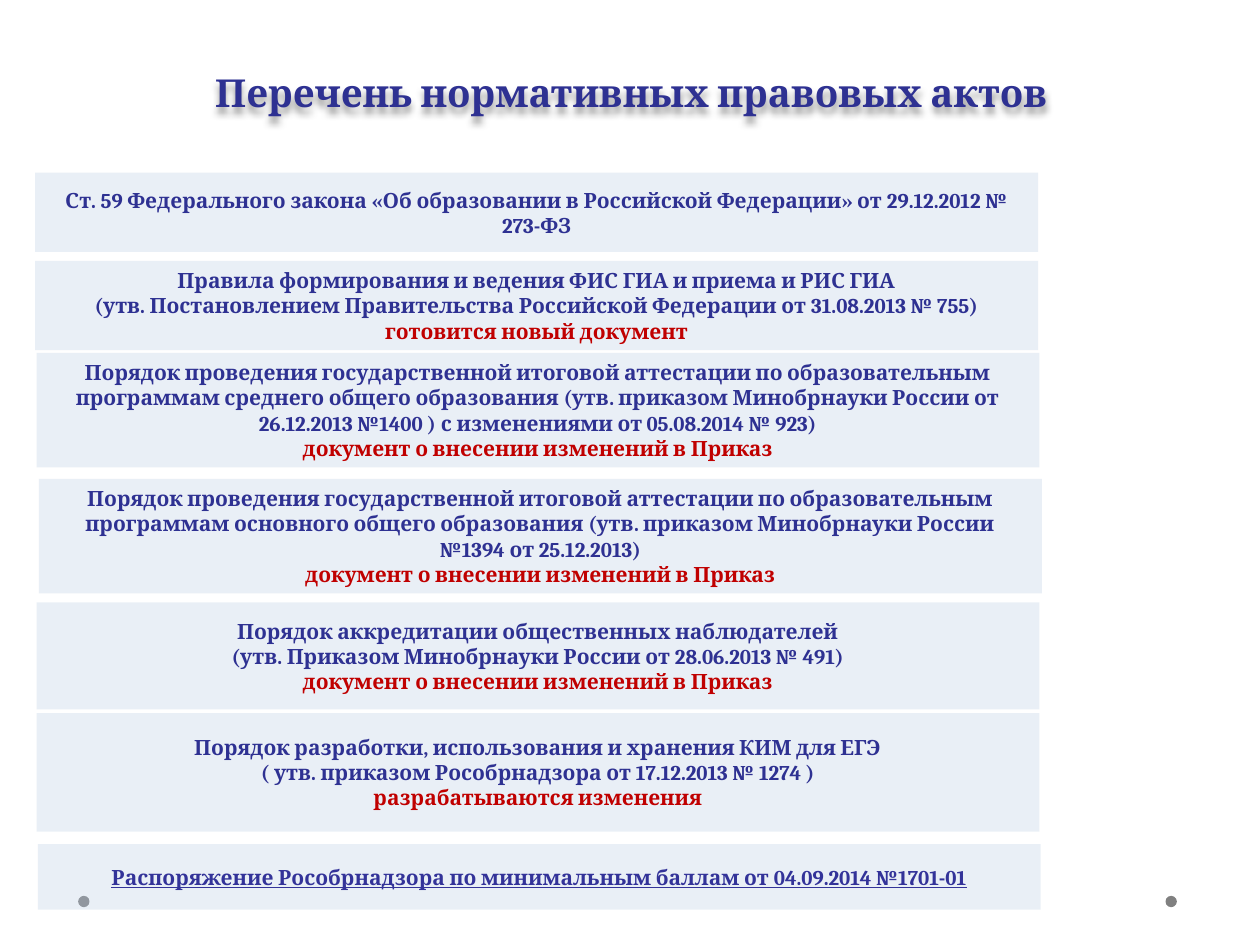
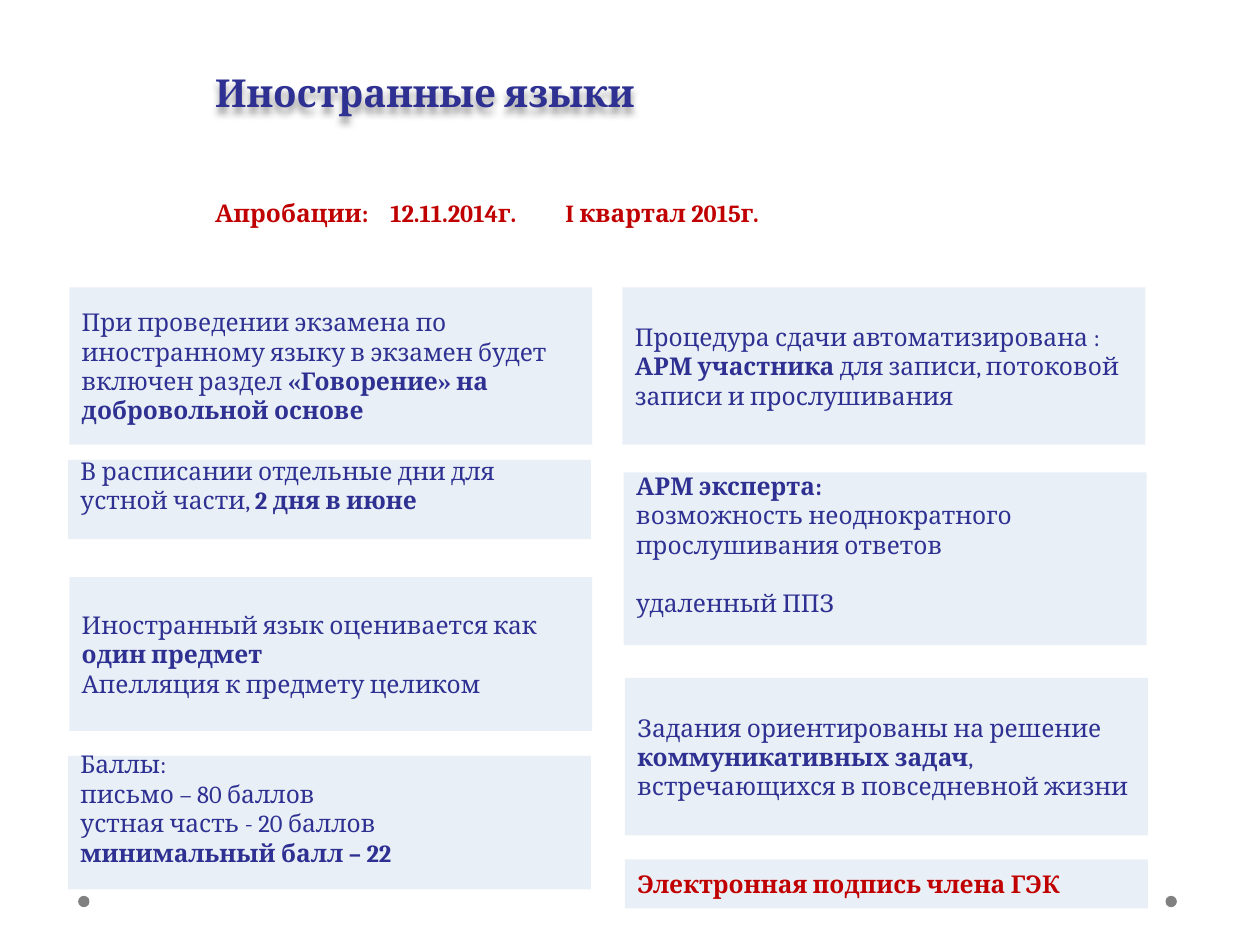
from dataclasses import dataclass

from lxml import etree
from pptx import Presentation
from pptx.dml.color import RGBColor
from pptx.enum.shapes import MSO_SHAPE
from pptx.enum.text import MSO_ANCHOR, PP_ALIGN
from pptx.oxml.ns import qn
from pptx.util import Inches, Pt

RECTANGLE, OVAL = MSO_SHAPE.RECTANGLE, MSO_SHAPE.OVAL
LEFT, CENTER = PP_ALIGN.LEFT, PP_ALIGN.CENTER
MIDDLE = MSO_ANCHOR.MIDDLE


@dataclass(frozen=True)
class Theme:
    font: str = "Cambria"
    navy: str = "2E3192"
    indigo: str = "333399"
    red: str = "C00000"
    band: str = "B9CDE5"
    band_opacity: int = 31
    dot: str = "808080"
    title_size: int = 22
    card_size: int = 14
    act_size: int = 12
    line_height: float = 0.23


THEME = Theme()


@dataclass(frozen=True)
class Span:
    text: str
    bold: bool = False
    color: str = THEME.navy
    underline: bool = False


def strong(text, color=THEME.navy, underline=False):
    return Span(text, True, color, underline)


# Shared elements
def write_paragraphs(text_frame, paragraphs, size, alignment=LEFT):
    """Each paragraph is a list of spans."""
    text_frame.word_wrap = True
    for index, spans in enumerate(paragraphs):
        paragraph = text_frame.paragraphs[0] if index == 0 else text_frame.add_paragraph()
        paragraph.alignment = alignment
        for span in spans:
            run = paragraph.add_run()
            run.text = span.text
            run.font.name = THEME.font
            run.font.size = Pt(size)
            run.font.bold = span.bold
            run.font.underline = span.underline
            run.font.color.rgb = RGBColor.from_string(span.color)


def add_filled_shape(slide, kind, left, top, width, height, color):
    shape = slide.shapes.add_shape(
        kind, Inches(left), Inches(top), Inches(width), Inches(height))
    shape.shadow.inherit = False
    shape.fill.solid()
    shape.fill.fore_color.rgb = RGBColor.from_string(color)
    shape.line.fill.background()
    return shape


def add_band(slide, left, top, width, height, paragraphs, size,
             alignment=LEFT, raised=False):
    """Translucent text band; raised text sits half a line above the middle."""
    band = add_filled_shape(slide, RECTANGLE, left, top, width, height, THEME.band)
    color = band.fill._xPr.find(qn("a:solidFill"))[0]
    etree.SubElement(color, qn("a:alpha"), val=str(THEME.band_opacity * 1000))
    text_frame = band.text_frame
    text_frame.vertical_anchor = MIDDLE
    if raised:
        text_frame.margin_bottom = Inches(0.05 + THEME.line_height)
    write_paragraphs(text_frame, paragraphs, size, alignment)
    return band


def add_text(slide, left, top, width, height, span, size):
    box = slide.shapes.add_textbox(
        Inches(left), Inches(top), Inches(width), Inches(height))
    write_paragraphs(box.text_frame, [[span]], size)
    return box


def add_title(slide, text):
    title = add_text(slide, 1.61, 0.5, 8.19, 0.47, strong(text), THEME.title_size)
    effects = etree.SubElement(title._element.spPr, qn("a:effectLst"))
    shadow = etree.SubElement(
        effects, qn("a:outerShdw"), blurRad=str(Pt(4)), dist=str(Pt(3)),
        dir="5400000", algn="t", rotWithShape="0")
    color = etree.SubElement(shadow, qn("a:srgbClr"), val="000000")
    etree.SubElement(color, qn("a:alpha"), val="40000")


def add_base_slide(presentation, title):
    slide = presentation.slides.add_slide(presentation.slide_layouts[6])
    for left in (9.25, 0.62):
        add_filled_shape(slide, OVAL, left, 7.11, 0.09, 0.09, THEME.dot)
    add_title(slide, title)
    return slide


def set_tab_stops(paragraph, positions):
    tab_list = etree.SubElement(paragraph._p.get_or_add_pPr(), qn("a:tabLst"))
    for position in positions:
        etree.SubElement(tab_list, qn("a:tab"), pos=str(Inches(position)), algn="l")


# Slide 1: list of legal acts
def build_acts_slide(presentation):
    slide = add_base_slide(presentation, "Перечень нормативных правовых актов")
    amendment = "документ о внесении изменений в Приказ"
    # left, top, height, lines of the act, status
    acts = [
        (0.28, 1.37, 0.63,
         ["Ст. 59 Федерального закона «Об образовании в Российской Федерации» "
          "от 29.12.2012 № 273-ФЗ"], None),
        (0.28, 2.07, 0.71,
         ["Правила формирования и ведения ФИС ГИА и приема и РИС ГИА",
          "(утв. Постановлением Правительства Российской Федерации "
          "от 31.08.2013 № 755)"], "готовится новый документ"),
        (0.29, 2.8, 0.91,
         ["Порядок проведения государственной итоговой аттестации по "
          "образовательным программам среднего общего образования (утв. приказом "
          "Минобрнауки России от 26.12.2013 №1400 ) с изменениями "
          "от 05.08.2014 № 923)"], amendment),
        (0.31, 3.8, 0.91,
         ["Порядок проведения государственной итоговой аттестации по "
          "образовательным программам основного общего образования (утв. приказом "
          "Минобрнауки России №1394 от 25.12.2013)"], amendment),
        (0.29, 4.78, 0.85,
         ["Порядок аккредитации общественных наблюдателей",
          "(утв. Приказом Минобрнауки России от 28.06.2013 № 491)"], amendment),
        (0.29, 5.66, 0.94,
         ["Порядок разработки, использования и хранения КИМ для ЕГЭ",
          "( утв. приказом Рособрнадзора от 17.12.2013 № 1274 )"],
         "разрабатываются изменения"),
    ]
    for left, top, height, lines, status in acts:
        paragraphs = [[strong(line)] for line in lines]
        if status:
            paragraphs.append([strong(status, THEME.red)])
        add_band(slide, left, top, 7.96, height, paragraphs, THEME.act_size, CENTER)

    order = strong("Распоряжение Рособрнадзора по минимальным баллам "
                   "от 04.09.2014 №1701-01", THEME.indigo, underline=True)
    add_band(slide, 0.3, 6.7, 7.96, 0.52, [[order]], THEME.act_size, CENTER)


# Slide 2: foreign language exam
def build_languages_slide(presentation):
    slide = add_base_slide(presentation, "Иностранные языки")
    trials = add_text(
        slide, 1.61, 1.52, 7.8, 0.34,
        strong("Апробации:\t12.11.2014г.\tI квартал 2015г.", THEME.red),
        THEME.card_size)
    set_tab_stops(trials.text_frame.paragraphs[0], (1.39, 2.78))

    def add_card(left, top, height, paragraphs, raised=False):
        return add_band(slide, left, top, 4.15, height, paragraphs,
                        THEME.card_size, raised=raised)

    # Left column
    add_card(0.55, 2.28, 1.25, [
        [Span("При проведении экзамена по иностранному языку в экзамен будет "
              "включен раздел "), strong("«Говорение» на добровольной основе")]])
    add_card(0.54, 3.65, 0.63, [
        [Span("В расписании отдельные дни для устной части, "),
         strong("2 дня в июне")]], raised=True)
    add_card(0.55, 4.58, 1.22, [
        [Span("Иностранный язык оценивается как "), strong("один предмет")],
        [Span("Апелляция к предмету целиком")]])
    add_card(0.54, 6, 1.06, [
        [Span("Баллы:")],
        [Span("письмо – 80 баллов")],
        [Span("устная часть - 20 баллов")],
        [strong("минимальный балл – 22")]], raised=True)

    # Right column
    add_card(4.94, 2.28, 1.25, [
        [Span("Процедура сдачи автоматизирована :")],
        [strong("АРМ участника "),
         Span("для записи, потоковой записи и прослушивания")]])
    expert = add_card(4.95, 3.75, 1.37, [
        [strong("АРМ эксперта:")],
        [Span("возможность неоднократного прослушивания ответов")],
        [Span("удаленный ППЗ")]], raised=True)
    expert.text_frame.paragraphs[-1].space_before = Inches(THEME.line_height)
    add_card(4.96, 5.38, 1.25, [
        [Span("Задания ориентированы на решение "), strong("коммуникативных задач"),
         Span(", встречающихся в повседневной жизни")]])
    add_card(4.96, 6.82, 0.39, [
        [strong("Электронная подпись члена ГЭК", THEME.red)]])


def main():
    presentation = Presentation()
    presentation.slide_width = Inches(10)
    presentation.slide_height = Inches(7.5)
    build_acts_slide(presentation)
    build_languages_slide(presentation)
    presentation.save("out.pptx")


if __name__ == "__main__":
    main()
